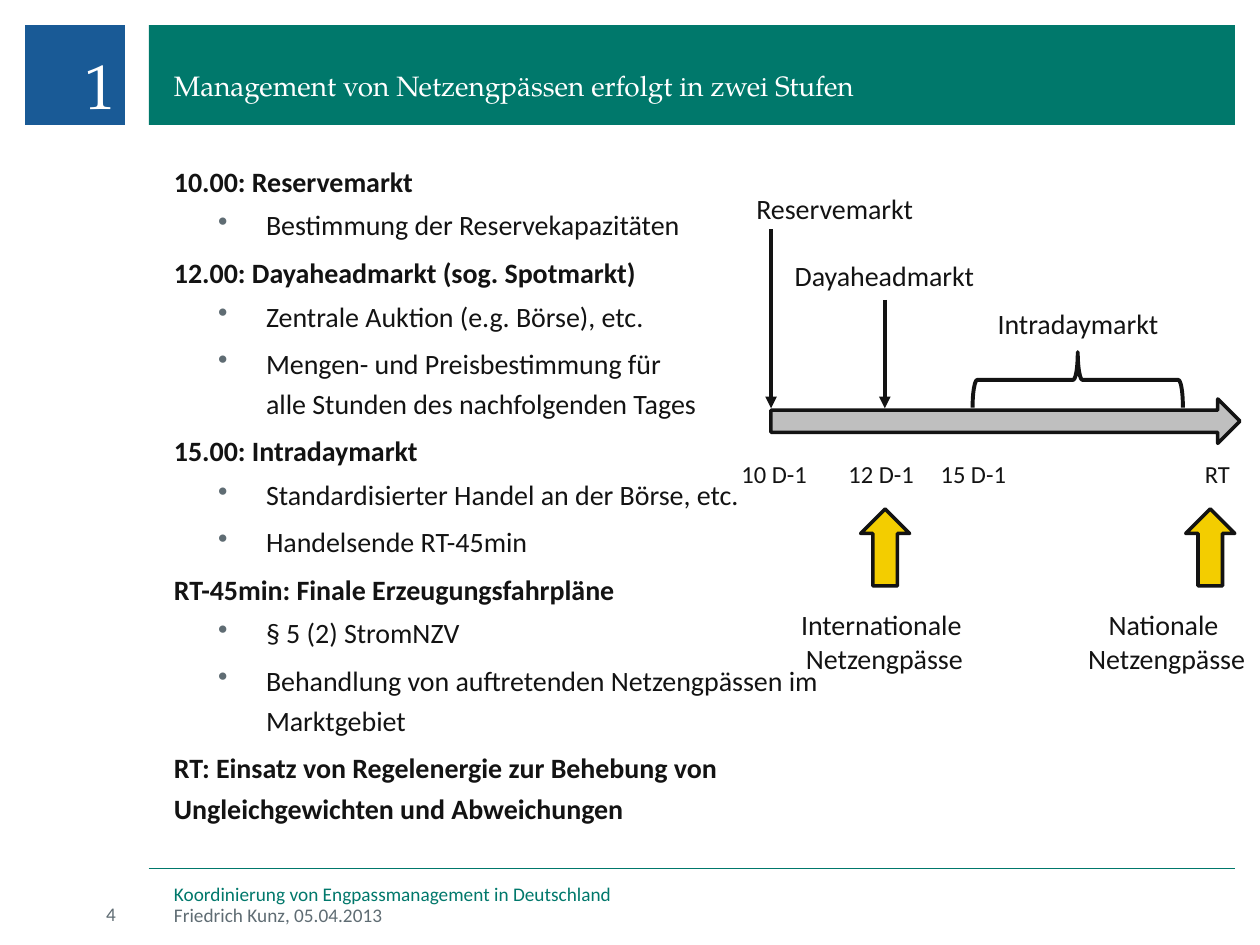
from lxml.etree import SubElement
from pptx import Presentation
from pptx.dml.color import RGBColor
from pptx.enum.shapes import MSO_CONNECTOR, MSO_SHAPE
from pptx.enum.text import MSO_ANCHOR, PP_ALIGN
from pptx.oxml.ns import qn
from pptx.util import Pt

COLORS = {
    "blue": "195A96", "green": "00786B", "white": "FFFFFF", "ink": "131313",
    "slate": "5F6C73", "gray": "BFBFBF", "yellow": "F3CD00",
}
SANS, SERIF = "Calibri", "TeX Gyre Pagella"
TEXT_LEFT = 99.4

AGENDA = [
    ("10.00: Reservemarkt", ["Bestimmung der Reservekapazitäten"]),
    ("12.00: Dayaheadmarkt (sog. Spotmarkt)",
     ["Zentrale Auktion (e.g. Börse), etc.",
      "Mengen- und Preisbestimmung für \nalle Stunden des nachfolgenden Tages"]),
    ("15.00: Intradaymarkt",
     ["Standardisierter Handel an der Börse, etc.", "Handelsende RT-45min"]),
    ("RT-45min: Finale Erzeugungsfahrpläne",
     ["§ 5 (2) StromNZV",
      "Behandlung von auftretenden Netzengpässen im Marktgebiet"]),
    ("RT: Einsatz von Regelenergie zur Behebung von "
     "Ungleichgewichten und Abweichungen", []),
]


def rgb(name):
    return RGBColor.from_string(COLORS[name])


def add_box(page, left, top, width, height, wrap=True, anchor=MSO_ANCHOR.TOP):
    """Add an empty text box without insets and return its text frame."""
    box = page.shapes.add_textbox(Pt(left), Pt(top), Pt(width), Pt(height))
    frame = box.text_frame
    frame.margin_left = frame.margin_right = 0
    frame.margin_top = frame.margin_bottom = 0
    frame.word_wrap = wrap
    frame.vertical_anchor = anchor
    return frame


def next_paragraph(frame):
    first = frame.paragraphs[0]
    return first if not first.runs else frame.add_paragraph()


def add_text(para, text, size, color="ink", font=SANS, bold=False):
    """Add runs to a paragraph, with a line break at each newline."""
    for number, line in enumerate(text.split("\n")):
        if number:
            para.add_line_break()
        span = para.add_run()
        span.text = line
        span.font.size = Pt(size)
        span.font.name = font
        span.font.bold = bold
        span.font.color.rgb = rgb(color)


def add_bullet(para):
    properties = para._p.get_or_add_pPr()
    properties.set("marL", str(Pt(52.6)))
    properties.set("indent", str(Pt(-27.4)))
    properties.set("lvl", "1")
    bullet_color = SubElement(properties, qn("a:buClr"))
    SubElement(bullet_color, qn("a:srgbClr"), val=COLORS["slate"])
    SubElement(properties, qn("a:buChar"), char="•")


def add_agenda(page):
    frame = add_box(page, TEXT_LEFT, 90, 368.6, 360)
    for heading, points in AGENDA:
        for text in [heading, *points]:
            is_heading = text is heading
            para = next_paragraph(frame)
            para.line_spacing = 1.2
            para.space_after = Pt(2 if is_heading else 4)
            if not is_heading:
                add_bullet(para)
            add_text(para, text, 16, bold=is_heading)


def add_label(page, center, top, lines, size=16):
    """Add a centred label around a horizontal position."""
    width = 120
    height = 1.22 * size * len(lines)
    frame = add_box(page, center - width / 2, top, width, height, wrap=False)
    for line in lines:
        para = next_paragraph(frame)
        para.alignment = PP_ALIGN.CENTER
        add_text(para, line, size)


def add_figure(page, kind, left, top, width, height, fill=None, line=None,
               weight=2, rotation=0):
    shape = page.shapes.add_shape(kind, Pt(left), Pt(top), Pt(width), Pt(height))
    shape.shadow.inherit = False
    shape.rotation = rotation
    if fill:
        shape.fill.solid()
        shape.fill.fore_color.rgb = rgb(fill)
    else:
        shape.fill.background()
    if line:
        shape.line.color.rgb = rgb(line)
        shape.line.width = Pt(weight)
    else:
        shape.line.fill.background()


def add_line(page, start, end, color, weight, arrow=False):
    line = page.shapes.add_connector(
        MSO_CONNECTOR.STRAIGHT, *[Pt(value) for value in (*start, *end)])
    line.line.color.rgb = rgb(color)
    line.line.width = Pt(weight)
    if arrow:
        SubElement(line.line._get_or_add_ln(), qn("a:tailEnd"), type="triangle")
    SubElement(line._element.spPr, qn("a:effectLst"))


def add_frame(page):
    """Add the header blocks, title, chapter number and footer."""
    add_figure(page, MSO_SHAPE.RECTANGLE, 14.4, 14.4, 57, 57, "blue")
    add_line(page, (85, 496), (705.6, 496), "green", 0.5)
    add_figure(page, MSO_SHAPE.RECTANGLE, 85, 14.4, 620.6, 57, "green")

    title = add_box(page, TEXT_LEFT, 23.8, 588.2, 34.6, False, MSO_ANCHOR.BOTTOM)
    title.paragraphs[0].space_after = Pt(2)
    add_text(title.paragraphs[0], "Management von Netzengpässen erfolgt in zwei Stufen",
             16, "white", SERIF)

    chapter = add_box(page, 12.2, 18, 54, 54).paragraphs[0]
    chapter.alignment = PP_ALIGN.RIGHT
    chapter.line_spacing = 1.2
    add_text(chapter, "1", 36, "white", SERIF)

    for top, text, color in [
        (504, "Koordinierung von Engpassmanagement in Deutschland", "green"),
        (516, "Friedrich Kunz, 05.04.2013", "slate"),
    ]:
        footer = add_box(page, TEXT_LEFT, top, 480, 12.2)
        add_text(footer.paragraphs[0], text, 11, color)

    number = add_box(page, 12.2, 514.8, 54, 14.4, anchor=MSO_ANCHOR.MIDDLE)
    number.paragraphs[0].alignment = PP_ALIGN.RIGHT
    add_text(number.paragraphs[0], "4", 11, "slate")


def add_timeline(page):
    add_figure(page, MSO_SHAPE.RIGHT_ARROW, 440.6, 228, 268, 25.4, "gray", "ink")
    for x, top in [(440.6, 131), (505.6, 171.4)]:
        add_line(page, (x, top), (x, 233.3), "ink", 2.25, arrow=True)
    add_figure(page, MSO_SHAPE.LEFT_BRACE, 600, 157, 31.7, 120.2,
               line="ink", weight=2.25, rotation=90)

    for center, top, text in [
        (477, 109.6, "Reservemarkt"),
        (505.4, 148, "Dayaheadmarkt"),
        (616, 175, "Intradaymarkt"),
    ]:
        add_label(page, center, top, [text])
    for center, text in [(442.4, "10 D-1"), (503.5, "12 D-1"),
                         (556.2, "15 D-1"), (695.6, "RT")]:
        add_label(page, center, 262, [text], 14)

    for arrow_center, label_center, scope in [
        (505.8, 505.4, "Internationale "), (691.6, 666.7, "Nationale "),
    ]:
        add_figure(page, MSO_SHAPE.RIGHT_ARROW, arrow_center - 22, 298.8, 44, 28,
                   "yellow", "ink", rotation=270)
        add_label(page, label_center, 347.2, [scope, "Netzengpässe"])


def main():
    deck = Presentation()
    deck.slide_width, deck.slide_height = Pt(720), Pt(540)
    page = deck.slides.add_slide(deck.slide_layouts[6])
    add_frame(page)
    add_agenda(page)
    add_timeline(page)
    deck.save("out.pptx")


if __name__ == "__main__":
    main()
